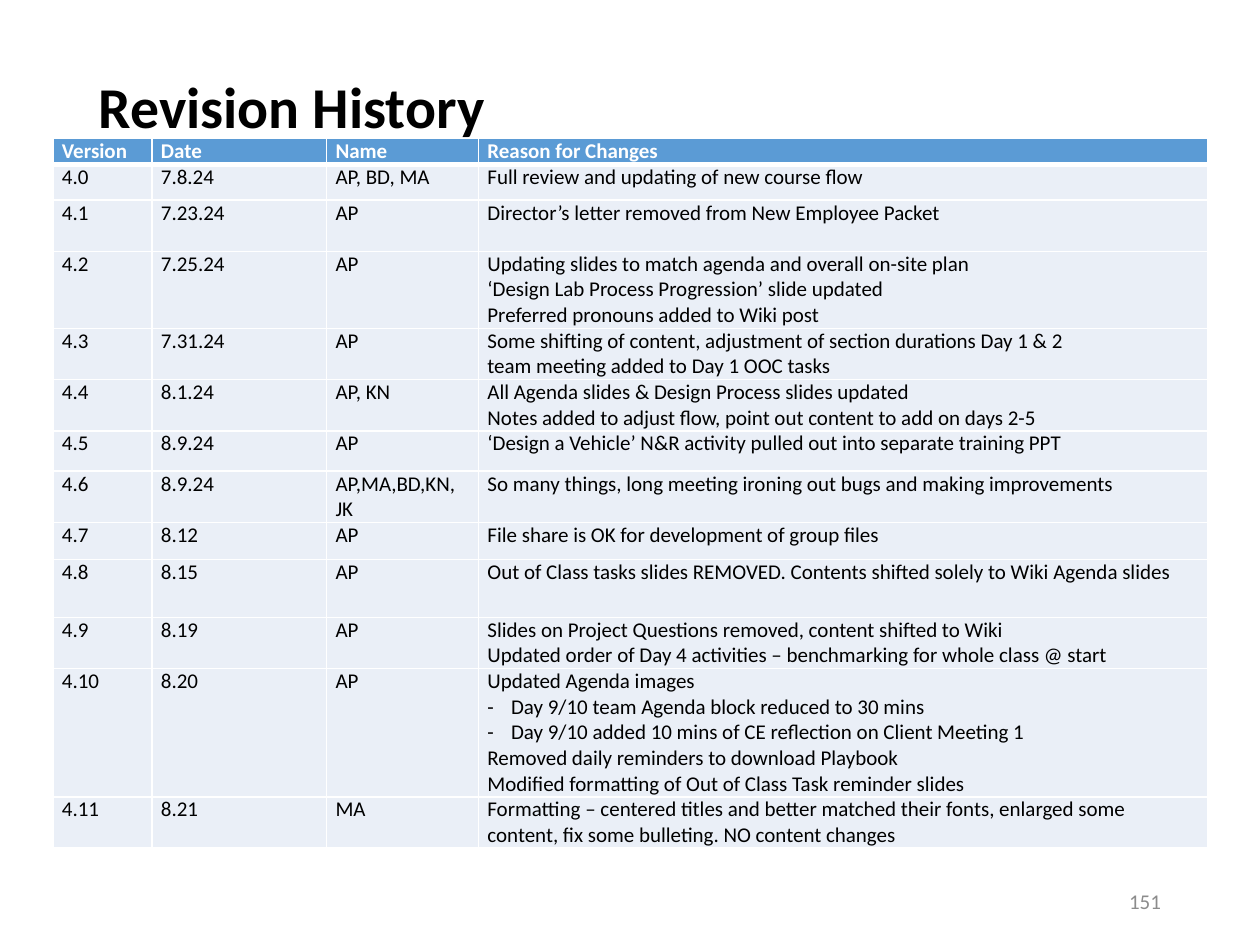
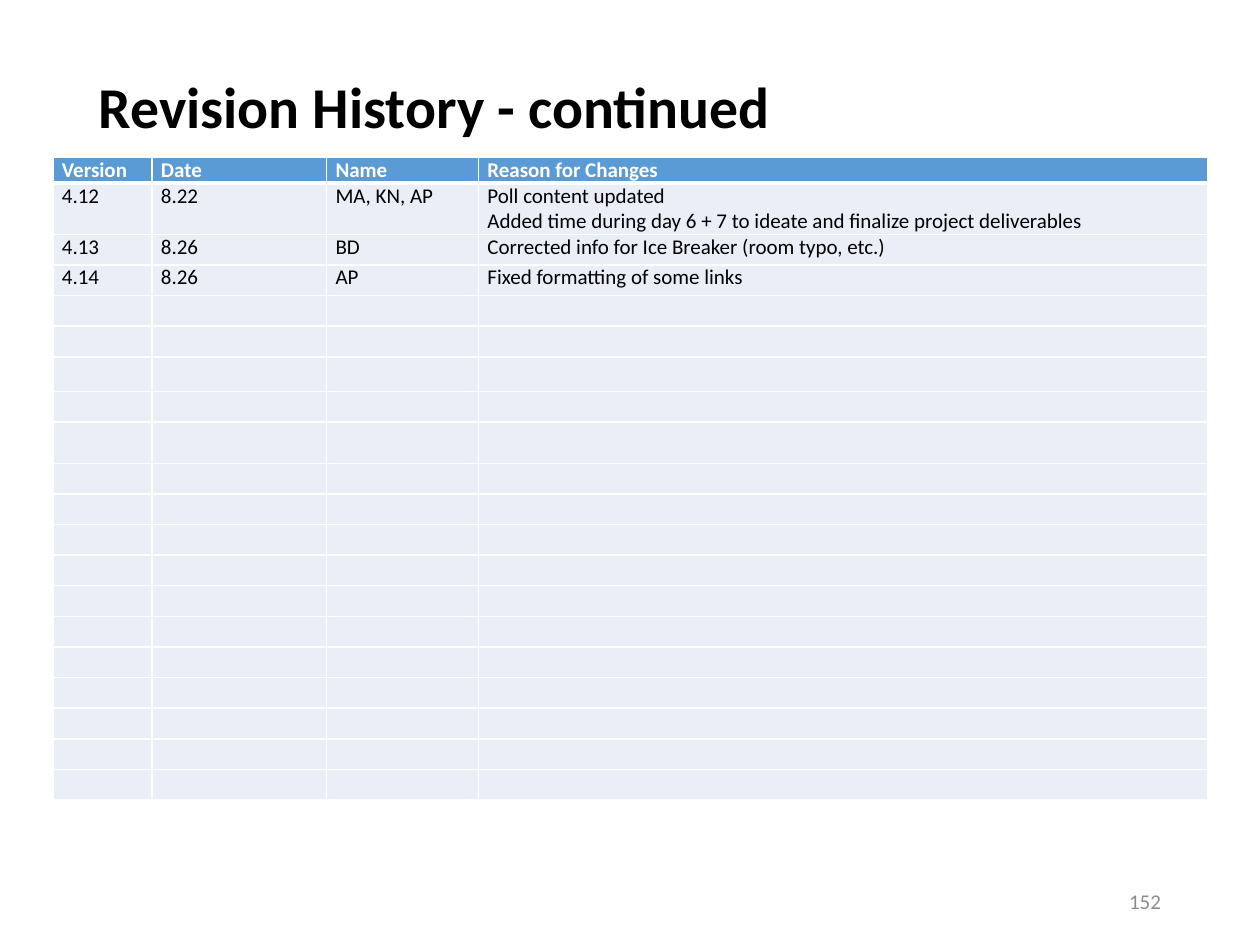
from lxml.etree import SubElement
from pptx import Presentation
from pptx.dml.color import RGBColor
from pptx.enum.text import MSO_ANCHOR, PP_ALIGN
from pptx.oxml.ns import qn
from pptx.util import Pt

FONT = "Calibri"
HUES = {"head": "5B9BD5", "body": "EAEFF7", "white": "FFFFFF",
        "ink": "000000", "grey": "8C8C8C"}
LEFT = 30.2
COLS = (56.6, 99.8, 86.8, 417)
LINE = 14.65
HEADS = ("Version", "Date", "Name", "Reason for Changes")
BULLET = "- "

FIRST = [
    (20.6, "4.0", "7.8.24", "AP, BD, MA", ["Full review and updating of new course flow"]),
    (29.3, "4.1", "7.23.24", "AP", ["Director’s letter removed from New Employee Packet"]),
    (0, "4.2", "7.25.24", "AP", [
        "Updating slides to match agenda and overall on-site plan",
        "‘Design Lab Process Progression’ slide updated",
        "Preferred pronouns added to Wiki post"]),
    (0, "4.3", "7.31.24", "AP", [
        "Some shifting of content, adjustment of section durations Day 1 & 2",
        "team meeting added to Day 1 OOC tasks"]),
    (0, "4.4", "8.1.24", "AP, KN", [
        "All Agenda slides & Design Process slides updated",
        "Notes added to adjust flow, point out content to add on days 2-5"]),
    (23, "4.5", "8.9.24", "AP", [
        "‘Design a Vehicle’ N&R activity pulled out into separate training PPT"]),
    (29.3, "4.6", "8.9.24", "AP,MA,BD,KN, JK", [
        "So many things, long meeting ironing out bugs and making improvements"]),
    (21.4, "4.7", "8.12", "AP", ["File share is OK for development of group files"]),
    (33, "4.8", "8.15", "AP", [
        "Out of Class tasks slides REMOVED. Contents shifted solely to Wiki Agenda slides"]),
    (0, "4.9", "8.19", "AP", [
        "Slides on Project Questions removed, content shifted to Wiki",
        "Updated order of Day 4 activities – benchmarking for whole class @ start"]),
    (0, "4.10", "8.20", "AP", [
        "Updated Agenda images",
        "- Day 9/10 team Agenda block reduced to 30 mins",
        "- Day 9/10 added 10 mins of CE reflection on Client Meeting 1",
        "Removed daily reminders to download Playbook",
        "Modified formatting of Out of Class Task reminder slides"]),
    (29.3, "4.11", "8.21", "MA", [
        "Formatting – centered titles and better matched their fonts, enlarged some "
        "content, fix some bulleting. NO content changes"]),
]

SPARE = [19.9 if i == 2 else 23.5 if i == 4 else 17.5 for i in range(16)]
NEXT = [
    (0, "4.12", "8.22", "MA, KN, AP", [
        "Poll content updated",
        "Added time during day 6 + 7 to ideate and finalize project deliverables"]),
    (17.5, "4.13", "8.26", "BD", ["Corrected info for Ice Breaker (room typo, etc.)"]),
    (17.5, "4.14", "8.26", "AP", ["Fixed formatting of some links"]),
] + [(high, "", "", "", [""]) for high in SPARE]


def add_run(para, text, size, hue, bold=False):
    """Add one styled run to a paragraph."""
    run = para.add_run()
    run.text = text
    font = run.font
    font.name, font.size, font.bold = FONT, Pt(size), bold
    font.color.rgb = RGBColor.from_string(HUES[hue])


def add_text(slide, box, text, size, hue, bold=False):
    """Add a one-line text box and return its frame and paragraph."""
    frame = slide.shapes.add_textbox(*map(Pt, box)).text_frame
    frame.word_wrap = True
    para = frame.paragraphs[0]
    add_run(para, text, size, hue, bold)
    return frame, para


def add_title(slide, text):
    """Add the slide title."""
    frame, para = add_text(slide, (49.5, 28.8, 621, 104.4), text, 33, "ink", True)
    frame.margin_top = Pt(16)
    para.line_spacing = 0.9


def add_number(slide, number):
    """Add the slide number at the lower right."""
    frame, para = add_text(slide, (508.5, 500.5, 162, 28.75), str(number), 12, "grey")
    frame.vertical_anchor = MSO_ANCHOR.MIDDLE
    para.alignment = PP_ALIGN.RIGHT


def add_dash(para):
    """Give a paragraph a hanging dash bullet."""
    props = para._p.get_or_add_pPr()
    props.set("marL", str(Pt(13.5)))
    props.set("indent", str(Pt(-13.5)))
    SubElement(props, qn("a:buFont"), typeface=FONT)
    SubElement(props, qn("a:buChar"), char="-")


def add_edge(cell, side, width):
    """Draw one white cell border."""
    props = cell._tc.get_or_add_tcPr()
    line = SubElement(props, qn(f"a:ln{side}"), w=str(Pt(width)))
    fill = SubElement(line, qn("a:solidFill"))
    SubElement(fill, qn("a:srgbClr"), val=HUES["white"])


def fill_cell(cell, lines, row):
    """Style a cell and write its lines."""
    head = row == 0
    widths = {"L": 1, "R": 1, "T": 3 if row == 1 else 1, "B": 3 if head else 1}
    for side, width in widths.items():
        add_edge(cell, side, width)
    cell.fill.solid()
    cell.fill.fore_color.rgb = RGBColor.from_string(HUES["head" if head else "body"])
    cell.margin_left = cell.margin_right = Pt(5.2)
    cell.margin_top = cell.margin_bottom = 0
    frame = cell.text_frame
    for i, text in enumerate(lines):
        para = frame.add_paragraph() if i else frame.paragraphs[0]
        if text.startswith(BULLET):
            add_dash(para)
        if text:
            add_run(para, text.removeprefix(BULLET), 12, "white" if head else "ink", head)
        else:
            SubElement(para._p, qn("a:endParaRPr"), sz="1200")


def add_log(slide, top, items):
    """Add a revision table with a header row."""
    rows = [(0, *HEADS[:3], [HEADS[3]])] + items
    highs = [max(row[0], LINE * len(row[4])) for row in rows]
    size = (LEFT, top, sum(COLS), sum(highs))
    grid = slide.shapes.add_table(len(rows), len(COLS), *map(Pt, size)).table
    grid.horz_banding = False
    for col, width in zip(grid.columns, COLS):
        col.width = Pt(width)
    for r, (row, high) in enumerate(zip(rows, highs)):
        grid.rows[r].height = Pt(high)
        for c, value in enumerate(row[1:]):
            fill_cell(grid.cell(r, c), value if c == 3 else [value], r)


def main():
    """Build and save the revision slides."""
    deck = Presentation()
    deck.slide_width, deck.slide_height = Pt(720), Pt(540)
    pages = [("Revision History", 79.2, FIRST), ("Revision History - continued", 90, NEXT)]
    for number, (title, top, items) in enumerate(pages, 151):
        slide = deck.slides.add_slide(deck.slide_layouts[6])
        add_title(slide, title)
        add_log(slide, top, items)
        add_number(slide, number)
    deck.save("out.pptx")


if __name__ == "__main__":
    main()
